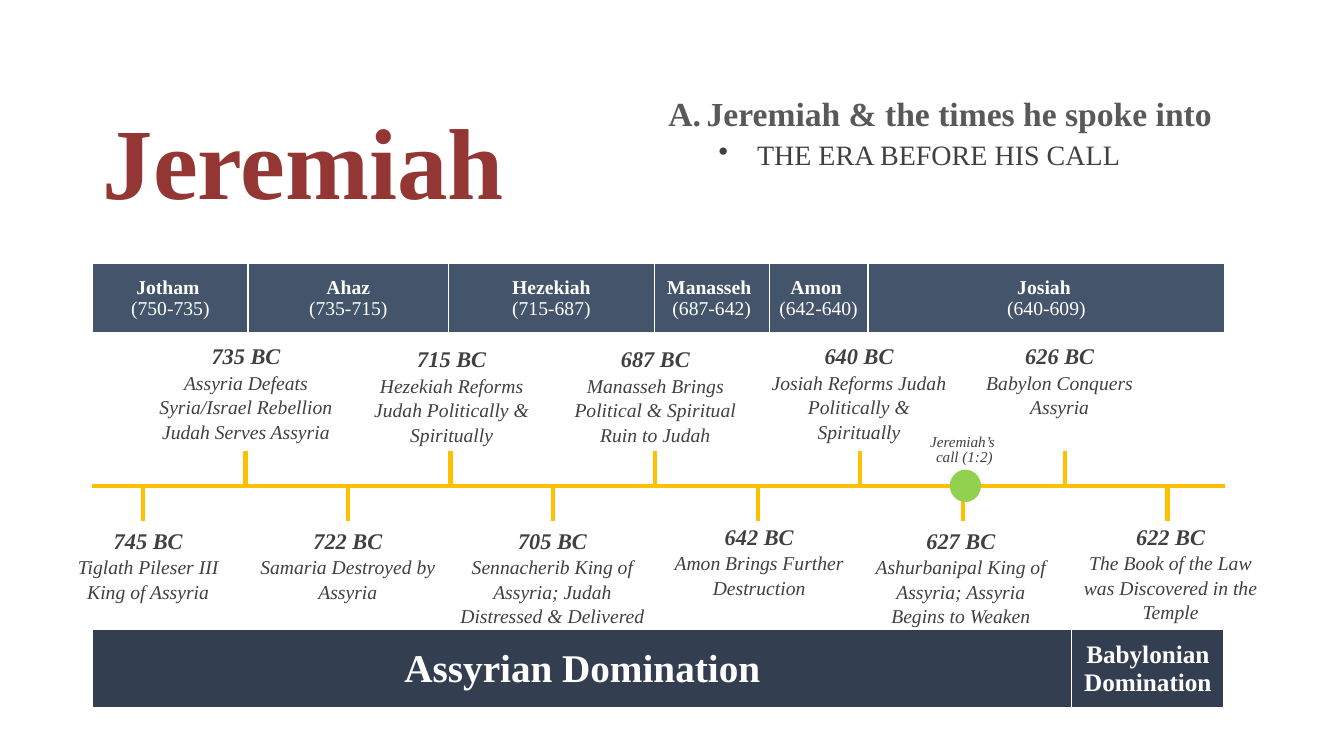
from lxml.etree import SubElement
from pptx import Presentation
from pptx.dml.color import RGBColor
from pptx.enum.shapes import MSO_CONNECTOR, MSO_SHAPE
from pptx.enum.text import MSO_ANCHOR, MSO_AUTO_SIZE, PP_ALIGN
from pptx.oxml.ns import qn
from pptx.util import Inches, Pt

COLORS = {"title": "943634", "heading": "595959", "text": "404040", "line": "FFC000",
          "kings": "44546A", "empires": "333F50", "call": "92D050", "white": "FFFFFF"}
FONT = "Times New Roman"

TITLE = "Jeremiah"
HEADING = "Jeremiah & the times he spoke into"
SUBHEADING = "THE ERA BEFORE HIS CALL"
CALL = ["Jeremiah’s ", "call (1:2)"]

KINGS = [(1.54, "Jotham ", "(750-735)"), (1.99, "Ahaz", "(735-715)"),
         (2.04, "Hezekiah", "(715-687)"), (1.14, "Manasseh ", "(687-642)"),
         (0.98, "Amon ", "(642-640)"), (3.54, "Josiah ", "(640-609)")]
EMPIRES = [(9.71, "Assyrian Domination", 28), (1.51, "Babylonian Domination", 18)]

EVENTS = [
    (0.45, 5.21, "745 BC", ["Tiglath Pileser III", "King of Assyria"]),
    (1.42, 3.38, "735 BC", ["Assyria Defeats", "Syria/Israel Rebellion", "Judah Serves Assyria"]),
    (2.43, 5.21, "722 BC", ["Samaria Destroyed by Assyria"]),
    (3.46, 3.41, "715 BC", ["Hezekiah Reforms Judah Politically & Spiritually"]),
    (4.46, 5.21, "705 BC", ["Sennacherib King of Assyria; Judah Distressed & Delivered"]),
    (5.48, 3.41, "687 BC", ["Manasseh Brings Political & Spiritual Ruin to Judah"]),
    (6.51, 5.17, "642 BC", ["Amon Brings Further Destruction"]),
    (7.5, 3.38, "640 BC", ["Josiah Reforms Judah Politically & Spiritually"]),
    (8.51, 5.21, "627 BC", ["Ashurbanipal King of Assyria; Assyria Begins to Weaken"]),
    (9.49, 3.38, "626 BC", ["Babylon Conquers Assyria"]),
    (10.59, 5.17, "622 BC", ["The Book of the Law was Discovered in the Temple"]),
]
AXIS_LEFT, AXIS_RIGHT, AXIS_Y = 0.91, 12.15, 4.82
TICK_FIRST, TICK_LAST, TICK = 1.42, 11.58, 0.35
TABLE_LEFT = 0.92

prs = Presentation()
prs.slide_width, prs.slide_height = Inches(13.33), Inches(7.5)
s = prs.slides.add_slide(prs.slide_layouts[5])


def rgb(name):
    return RGBColor.from_string(COLORS[name])


def write(tf, i, text, size, color, spacing=1.0, align=PP_ALIGN.CENTER, **font):
    p = tf.paragraphs[0] if i == 0 else tf.add_paragraph()
    p.alignment, p.line_spacing = align, spacing
    p.space_before = Pt(0)
    r = p.add_run()
    r.text = text
    for key, value in {"name": FONT, "size": Pt(size), **font}.items():
        setattr(r.font, key, value)
    r.font.color.rgb = rgb(color)
    return p


def text_box(x, y, w, h):
    tf = s.shapes.add_textbox(*map(Inches, (x, y, w, h))).text_frame
    tf.word_wrap = True
    return tf


def bullet(p, margin, tag, **attrs):
    pPr = p._p.get_or_add_pPr()
    pPr.set("marL", str(Inches(margin)))
    pPr.set("indent", str(Inches(-0.38)))
    SubElement(pPr, qn(tag), attrs)


def line(x1, y1, x2, y2):
    c = s.shapes.add_connector(MSO_CONNECTOR.STRAIGHT, *map(Inches, (x1, y1, x2, y2)))
    c.line.color.rgb, c.line.width = rgb("line"), Pt(3)
    SubElement(c._element.spPr, qn("a:effectLst"))


def band(y, h, widths, fill):
    frame = s.shapes.add_table(1, len(widths), *map(Inches, (TABLE_LEFT, y, sum(widths), h)))
    table = frame.table
    table.rows[0].height = Inches(h)
    for col, width in zip(table.columns, widths):
        col.width = Inches(width)
    cells = list(table.rows[0].cells)
    for cell in cells:
        cell.vertical_anchor = MSO_ANCHOR.MIDDLE
        cell.margin_left = cell.margin_right = Inches(0.05)
        tcPr = cell._tc.get_or_add_tcPr()
        for side, width in {"L": 1, "R": 1, "T": 1, "B": 3}.items():
            ln = SubElement(tcPr, qn(f"a:ln{side}"), w=str(Pt(width)))
            SubElement(SubElement(ln, qn("a:solidFill")), qn("a:srgbClr"), val=COLORS["white"])
        cell.fill.solid()
        cell.fill.fore_color.rgb = rgb(fill)
    return [cell.text_frame for cell in cells]


title = s.shapes.title
title.left, title.top, title.width, title.height = map(Inches, (0.92, 0.5, 4.3, 1.75))
tf = title.text_frame
tf.vertical_anchor, tf.auto_size = MSO_ANCHOR.BOTTOM, MSO_AUTO_SIZE.NONE
write(tf, 0, TITLE, 72, "title", 0.9, PP_ALIGN.LEFT, bold=True)

tf = text_box(6.53, 0.92, 6.11, 2.39)
p = write(tf, 0, HEADING, 24, "heading", 0.9, PP_ALIGN.LEFT, bold=True)
bullet(p, 0.38, "a:buAutoNum", type="alphaUcPeriod")
p = write(tf, 1, SUBHEADING, 20, "text", 0.9, PP_ALIGN.LEFT)
p.space_before = Pt(5)
bullet(p, 0.88, "a:buChar", char="•")

line(AXIS_LEFT, AXIS_Y, AXIS_RIGHT, AXIS_Y)
step = (TICK_LAST - TICK_FIRST) / (len(EVENTS) - 1)
for i, (left, top, year, notes) in enumerate(EVENTS):
    x = TICK_FIRST + i * step
    line(x, AXIS_Y, x, AXIS_Y + (TICK if top > AXIS_Y else -TICK))
    tf = text_box(left, top, 2.04, 1.09)
    write(tf, 0, year, 16, "text", 0.9, bold=True, italic=True)
    for n, note in enumerate(notes, 1):
        write(tf, n, note, 14, "text", 1.04, italic=True)

for tf, (_, empire, size) in zip(band(6.24, 0.79, [e[0] for e in EMPIRES], "empires"), EMPIRES):
    write(tf, 0, empire, size, "white", bold=True)
for tf, (_, king, reign) in zip(band(2.61, 0.7, [k[0] for k in KINGS], "kings"), KINGS):
    write(tf, 0, king, 14, "white", bold=True)
    write(tf, 1, reign, 14, "white", bold=False)

dot = s.shapes.add_shape(MSO_SHAPE.OVAL, *map(Inches, (9.42, 4.66, 0.31, 0.32)))
dot.shadow.inherit = False
dot.fill.solid()
dot.fill.fore_color.rgb = rgb("call")
dot.line.fill.background()

tf = text_box(8.8, 4.28, 1.53, 0.41)
for i, text in enumerate(CALL):
    write(tf, i, text, 10.8, "text", 0.8, italic=True)

prs.save("out.pptx")
